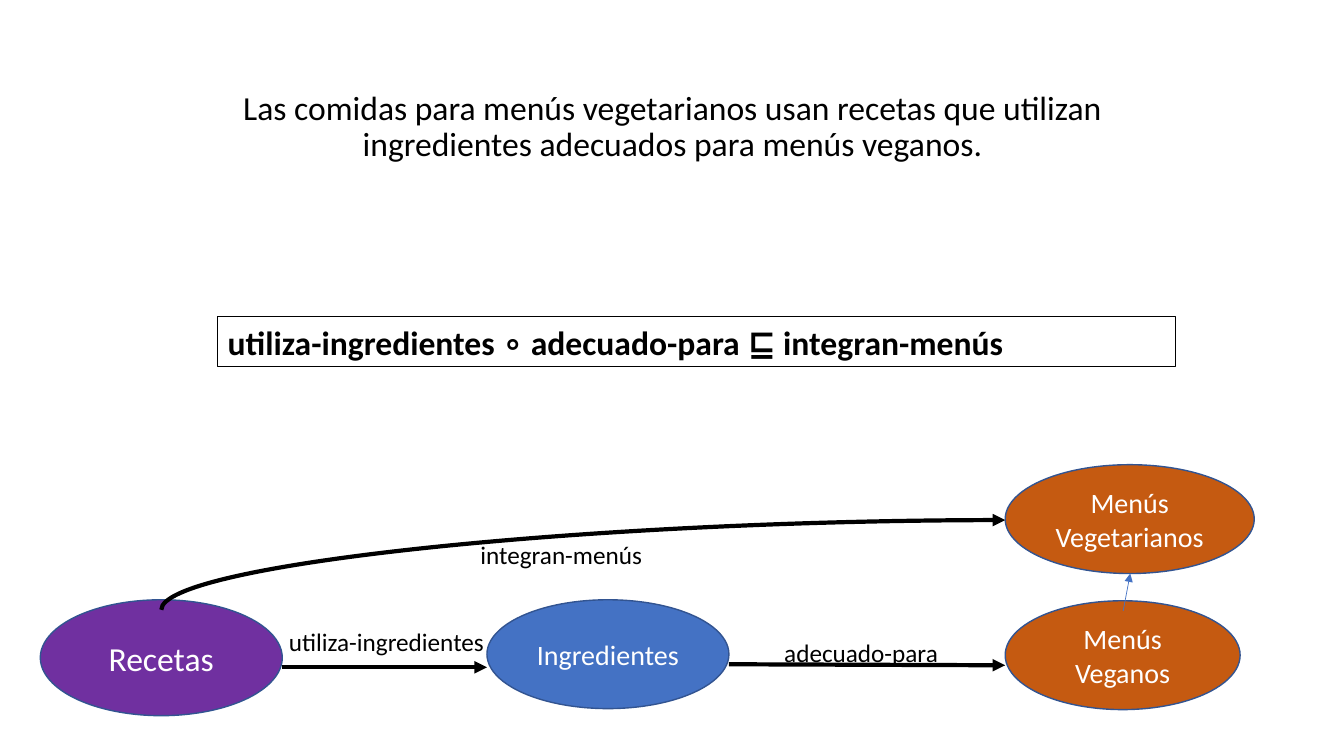
from lxml import etree
from pptx import Presentation
from pptx.dml.color import RGBColor
from pptx.enum.shapes import MSO_CONNECTOR, MSO_SHAPE
from pptx.enum.text import MSO_ANCHOR, PP_ALIGN
from pptx.oxml.ns import qn
from pptx.util import Inches, Pt

STRAIGHT, CURVE = MSO_CONNECTOR.STRAIGHT, MSO_CONNECTOR.CURVE
OVAL, RECTANGLE = MSO_SHAPE.OVAL, MSO_SHAPE.RECTANGLE
TOP, MIDDLE = MSO_ANCHOR.TOP, MSO_ANCHOR.MIDDLE
LEFT, CENTER = PP_ALIGN.LEFT, PP_ALIGN.CENTER

FONT = "Calibri"
BLACK, WHITE, BLUE, OUTLINE = "000000", "FFFFFF", "4472C4", "325491"
ORANGE, PURPLE = "C55A11", "7030A0"

STATEMENT = ("Las comidas para menús vegetarianos usan recetas que utilizan "
             "ingredientes adecuados para menús veganos.")
STATEMENT_BOX = (1.67, 0.86, 10, 4.89)
RULE = "utiliza-ingredientes ∘ adecuado-para ⊑ integran-menús"
RULE_BOX = (2.16, 3.14, 9.5, 0.5)
CONCEPTS = [
    ("Ingredientes", (4.83, 5.95, 2.4, 1.08), BLUE, 20),
    ("Menús Veganos", (9.97, 5.96, 2.33, 1.08), ORANGE, 20),
    ("Recetas", (0.4, 5.95, 2.4, 1.15), PURPLE, 24),
    ("Menús Vegetarianos", (9.97, 4.61, 2.47, 1.08), ORANGE, 20),
]
RELATION_LABELS = [
    ("adecuado-para", (7.68, 6.27, 1.96, 0.4)),
    (" utiliza-ingredientes", (2.71, 6.16, 2.21, 0.4)),
    (" integran-menús", (4.61, 5.3, 3.53, 0.4)),
]
ARROWS = [
    ((7.23, 6.59), (9.97, 6.6), BLACK, 3),
    ((2.8, 6.62), (4.83, 6.62), BLACK, 3),
    ((11.14, 6.06), (11.21, 5.69), BLUE, 0.5),
]
CURVED_ARROW = ((1.6, 6.05), (9.97, 5.16), BLACK, 3)


def color(value):
    return RGBColor.from_string(value)


def write(shape, text, size, ink=BLACK, align=LEFT, anchor=TOP, bold=False):
    frame = shape.text_frame
    frame.word_wrap = True
    frame.vertical_anchor = anchor
    paragraph = frame.paragraphs[0]
    paragraph.alignment = align
    run = paragraph.add_run()
    run.text = text
    run.font.name = FONT
    run.font.size = Pt(size)
    run.font.bold = bold
    run.font.color.rgb = color(ink)
    return paragraph


def add_text(slide, box, text, size, **style):
    shape = slide.shapes.add_textbox(*map(Inches, box))
    return write(shape, text, size, **style)


def add_outlined(slide, kind, box, fill, line, width):
    shape = slide.shapes.add_shape(kind, *map(Inches, box))
    shape.shadow.inherit = False
    if fill:
        shape.fill.solid()
        shape.fill.fore_color.rgb = color(fill)
    else:
        shape.fill.background()
    shape.line.color.rgb = color(line)
    shape.line.width = Pt(width)
    return shape


def add_arrow(slide, start, end, ink, width, kind=STRAIGHT):
    connector = slide.shapes.add_connector(kind, *map(Inches, start + end))
    connector.line.color.rgb = color(ink)
    connector.line.width = Pt(width)
    properties = connector._element.spPr
    line = properties.find(qn("a:ln"))
    etree.SubElement(line, qn("a:tailEnd"), type="triangle")
    etree.SubElement(properties, qn("a:effectLst"))
    return properties


def add_quarter_curve(slide, start, end, ink, width):
    """Draw a curve that leaves vertically, as a quarter-turned connector."""
    center_x, center_y = (start[0] + end[0]) / 2, (start[1] + end[1]) / 2
    half_x, half_y = (end[0] - start[0]) / 2, (end[1] - start[1]) / 2
    turned_start = (center_x - half_y, center_y + half_x)
    turned_end = (center_x + half_y, center_y - half_x)
    properties = add_arrow(slide, turned_start, turned_end, ink, width, CURVE)
    properties.find(qn("a:xfrm")).set("rot", "5400000")
    properties.find(qn("a:prstGeom")).set("prst", "curvedConnector2")


def main():
    presentation = Presentation()
    presentation.slide_width = Inches(13.33)
    presentation.slide_height = Inches(7.5)
    slide = presentation.slides.add_slide(presentation.slide_layouts[6])

    statement = add_text(slide, STATEMENT_BOX, STATEMENT, 24, align=CENTER)
    statement.line_spacing = 0.9
    statement.space_before = Pt(10)

    rule = add_outlined(slide, RECTANGLE, RULE_BOX, None, BLACK, 0.75)
    write(rule, RULE, 24, bold=True)

    for name, box, fill, size in CONCEPTS:
        ellipse = add_outlined(slide, OVAL, box, fill, OUTLINE, 1)
        write(ellipse, name, size, WHITE, CENTER, MIDDLE)
    for arrow in ARROWS:
        add_arrow(slide, *arrow)
    add_quarter_curve(slide, *CURVED_ARROW)
    for label, box in RELATION_LABELS:
        add_text(slide, box, label, 18)

    presentation.save("out.pptx")


if __name__ == "__main__":
    main()
